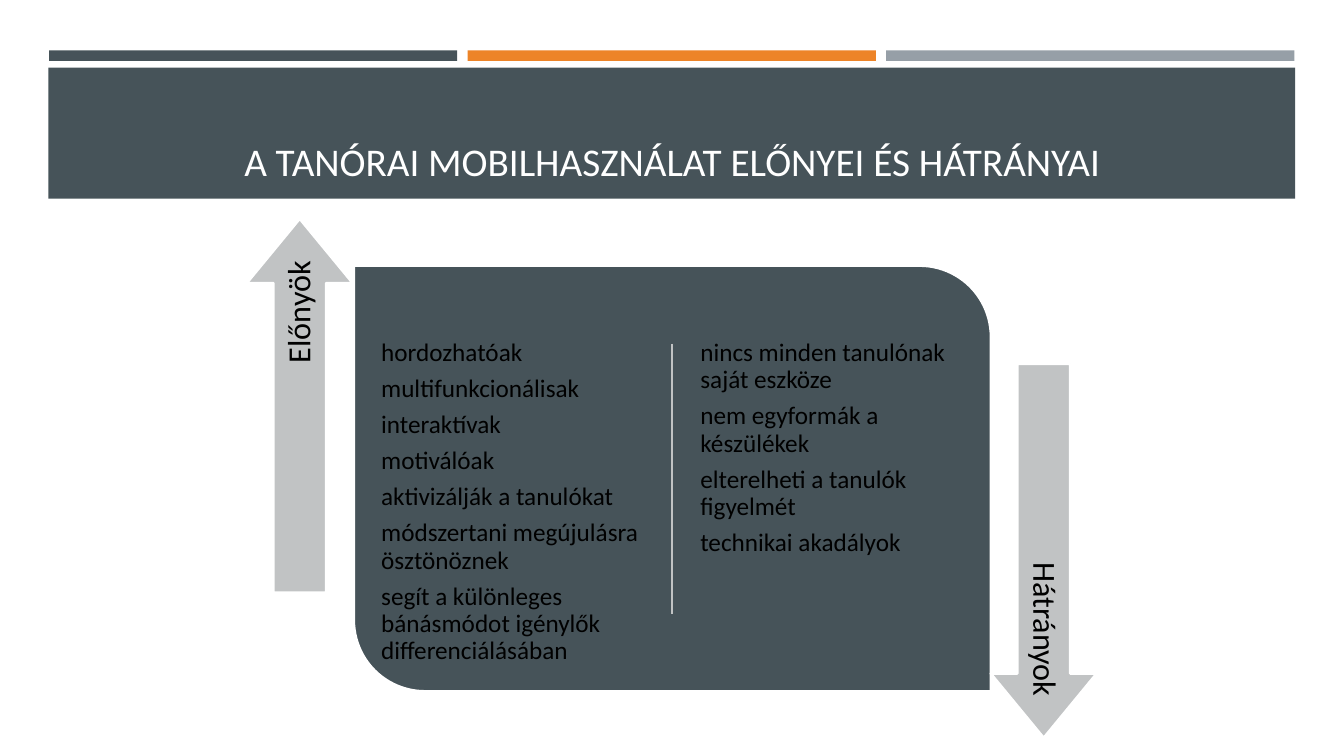
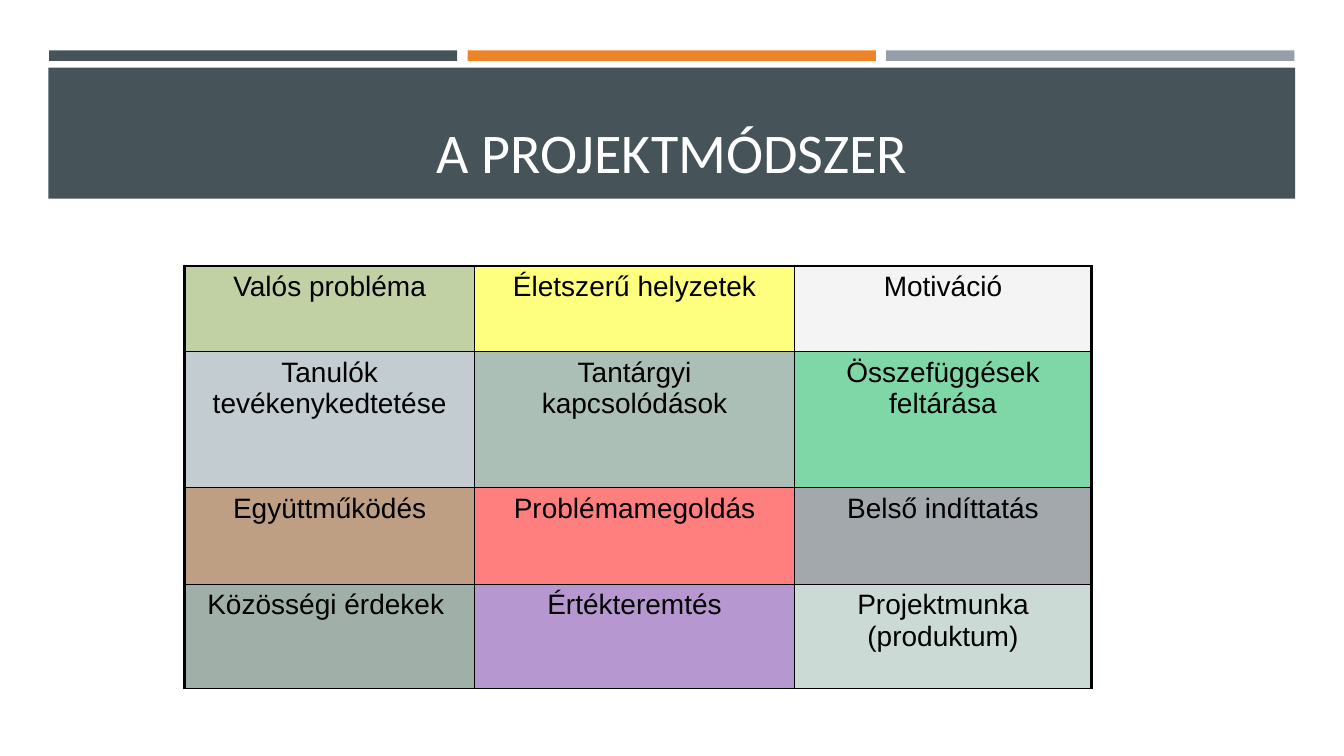
"""Two slides: pros and cons of phones in class, and the project method."""
from lxml import etree
from pptx import Presentation
from pptx.dml.color import RGBColor
from pptx.enum.shapes import MSO_CONNECTOR, MSO_SHAPE
from pptx.enum.text import MSO_ANCHOR, PP_ALIGN
from pptx.oxml.ns import qn
from pptx.util import Pt

RECT, ARROW, PANEL = MSO_SHAPE.RECTANGLE, MSO_SHAPE.RIGHT_ARROW, MSO_SHAPE.ROUND_2_DIAG_RECTANGLE
TOP, MIDDLE, BOTTOM = MSO_ANCHOR.TOP, MSO_ANCHOR.MIDDLE, MSO_ANCHOR.BOTTOM
LEFT, CENTER, RIGHT = PP_ALIGN.LEFT, PP_ALIGN.CENTER, PP_ALIGN.RIGHT


class Theme:
    slate, orange, gray = "465359", "ED8428", "969FA7"
    pale, white, black = "C1C3C4", "FFFFFF", "000000"
    font, grid = "Calibri", "Arial"
    body, label, cell = 18, 23, 20
    edge, thin, thick = 1.75, 1, 2.25


def draw(slide, kind, area, fill, line=None):
    shape = slide.shapes.add_shape(kind, *map(Pt, area))
    shape.shadow.inherit = False
    shape.fill.solid()
    shape.fill.fore_color.rgb = RGBColor.from_string(fill)
    if line:
        shape.line.color.rgb = RGBColor.from_string(line)
        shape.line.width = Pt(Theme.edge)
    else:
        shape.line.fill.background()
    return shape


def write(slide, area, text, size, color=Theme.black, align=LEFT, anchor=TOP, inset=(7.2, 3.6), lead=None, after=0):
    box = slide.shapes.add_textbox(*map(Pt, area))
    frame = box.text_frame
    frame.word_wrap = True
    frame.vertical_anchor = anchor
    frame.margin_left = frame.margin_right = Pt(inset[0])
    frame.margin_top = frame.margin_bottom = Pt(inset[1])
    frame.text = text
    for para in frame.paragraphs:
        para.alignment = align
        para.line_spacing = lead
        para.space_after = Pt(after)
        para.font.name = Theme.font
        para.font.size = Pt(size)
        para.font.color.rgb = RGBColor.from_string(color)
    return box


deck = Presentation()
deck.slide_width, deck.slide_height = Pt(960), Pt(540)

slides = []
for title, size in [("A TANÓRAI MOBILHASZNÁLAT ELŐNYEI ÉS HÁTRÁNYAI", 28), ("A PROJEKTMÓDSZER", 40)]:
    slide = deck.slides.add_slide(deck.slide_layouts[6])
    for i, color in enumerate([Theme.slate, Theme.orange, Theme.gray]):
        draw(slide, RECT, (35 + i * 299, 36, 291.6, 7.5), color)
    draw(slide, RECT, (34.6, 48.4, 890.6, 93.6), Theme.slate)
    write(slide, (46, 55.4, 868, 80), title, size, Theme.white, CENTER, BOTTOM)
    slides.append(slide)
pros, method = slides

panel = draw(pros, PANEL, (252.8, 189.8, 455, 304), Theme.slate, Theme.white)
panel.adjustments[0], panel.adjustments[1] = 0, 0.167
rule = pros.shapes.add_connector(MSO_CONNECTOR.STRAIGHT, Pt(480.2), Pt(245.5), Pt(480.2), Pt(438.5))
rule.line.color.rgb = RGBColor.from_string(Theme.pale)
rule.line.width = Pt(Theme.edge)
etree.SubElement(rule.element.spPr, qn("a:effectLst"))

lists = [
    ["hordozhatóak", "multifunkcionálisak", "interaktívak", "motiválóak", "aktivizálják a tanulókat",
     "módszertani megújulásra ösztönöznek", "segít a különleges bánásmódot igénylők differenciálásában"],
    ["nincs minden tanulónak saját eszköze", "nem egyformák a készülékek",
     "elterelheti a tanulók figyelmét", "technikai akadályok"],
]
for i, items in enumerate(lists):
    write(pros, (267.3 + i * 228, 237.8, 197.3, 208), "\n".join(items), Theme.body,
          inset=(5, 5), lead=0.9, after=6.3)

sides = [
    ("Előnyök", 270, (80.6, 252), (92.2, 282.2)),
    ("Hátrányok", 90, (612, 355.7), (623.5, 363.6)),
]
for text, turn, spot, place in sides:
    arrow = draw(pros, ARROW, (*spot, 267, 75.6), Theme.pale, Theme.white)
    arrow.adjustments[0], arrow.adjustments[1] = 0.498, 0.607
    arrow.rotation = turn
    label = write(pros, (*place, 244, 38.2), text, Theme.label, align=RIGHT, anchor=MIDDLE,
                  inset=(7.2, 7.2), lead=0.9)
    label.rotation = turn

rows = [
    (61.2, [("Valós probléma", "84A44B"), ("Életszerű helyzetek", "FFFF00"), ("Motiváció", "EBEBEB")]),
    (97.2, [("Tanulók tevékenykedtetése", "899AA2"), ("Tantárgyi kapcsolódások", "5A8071"),
            ("Összefüggések feltárása", "00B050")]),
    (69.1, [("Együttműködés", "80410B"), ("Problémamegoldás", "FF0000"), ("Belső indíttatás", "465359")]),
    (74.2, [("Közösségi érdekek ", "446055"), ("Értékteremtés", "7030A0"),
            ("Projektmunka (produktum)", "98B7AB")]),
]
widths = [207.4, 228.2, 212.4]
high = sum(row[0] for row in rows)
table = method.shapes.add_table(len(rows), len(widths), Pt(131.8), Pt(190), Pt(sum(widths)), Pt(high)).table
table.first_row = table.horz_banding = False
for col, width in zip(table.columns, widths):
    col.width = Pt(width)
for r, (tall, cells) in enumerate(rows):
    table.rows[r].height = Pt(tall)
    for c, (text, color) in enumerate(cells):
        cell = table.cell(r, c)
        cell.text = text
        para = cell.text_frame.paragraphs[0]
        para.alignment = CENTER
        font = para.runs[0].font
        font.name, font.size = Theme.grid, Pt(Theme.cell)
        font.color.rgb = RGBColor.from_string(Theme.black)
        cell.fill.solid()
        cell.fill.fore_color.rgb = RGBColor.from_string(color)
        props = cell._tc.get_or_add_tcPr()
        tint = props.find(".//" + qn("a:srgbClr"))
        etree.SubElement(tint, qn("a:alpha"), val="50000")
        outer = {"L": c == 0, "R": c == len(widths) - 1, "T": r == 0, "B": False}
        for i, (side, bold) in enumerate(outer.items()):
            width = Pt(Theme.thick if bold else Theme.thin)
            line = etree.Element(qn("a:ln" + side), w=str(int(width)))
            fill = etree.SubElement(line, qn("a:solidFill"))
            etree.SubElement(fill, qn("a:srgbClr"), val=Theme.black)
            props.insert(i, line)

deck.save("out.pptx")
